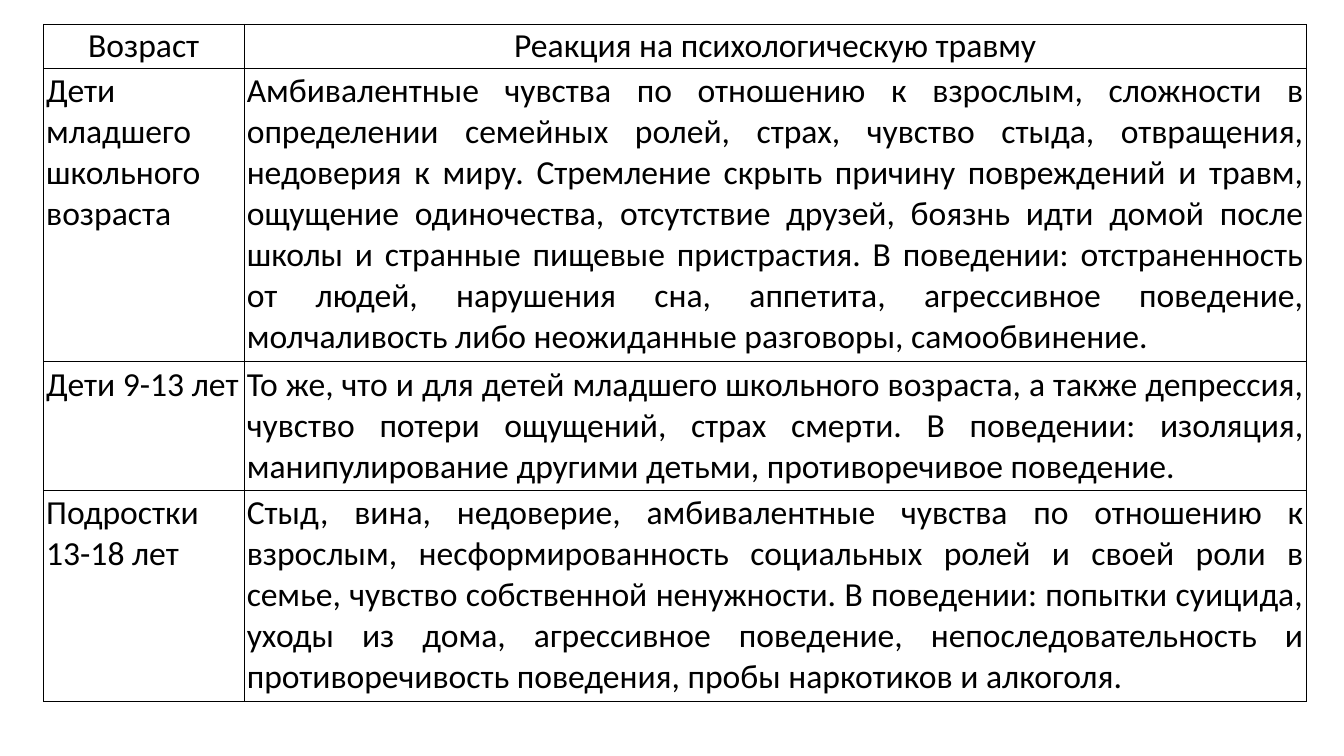
from pptx import Presentation
from pptx.dml.color import RGBColor
from pptx.enum.text import PP_ALIGN
from pptx.oxml import parse_xml
from pptx.oxml.ns import nsdecls
from pptx.util import Pt

COLORS = {"text": "000000", "border": "000000"}
FONT = "Calibri"
COL_WIDTHS = [143.3, 758.9]
ROW_HEIGHTS = [31.5, 209.5, 91.5, 151]
ROWS = [
    ("Возраст", "Реакция на психологическую травму"),
    ("Дети младшего школьного возраста",
     "Амбивалентные чувства по отношению к взрослым, сложности в определении "
     "семейных ролей, страх, чувство стыда, отвращения, недоверия к миру. "
     "Стремление скрыть причину повреждений и травм, ощущение одиночества, "
     "отсутствие друзей, боязнь идти домой после школы и странные пищевые "
     "пристрастия. В поведении: отстраненность от людей, нарушения сна, аппетита, "
     "агрессивное поведение, молчаливость либо неожиданные разговоры, самообвинение."),
    ("Дети 9-13 лет",
     "То же, что и для детей младшего школьного возраста, а также депрессия, "
     "чувство потери ощущений, страх смерти. В поведении: изоляция, "
     "манипулирование другими детьми, противоречивое поведение."),
    ("Подростки 13-18 лет",
     "Стыд, вина, недоверие, амбивалентные чувства по отношению к взрослым, "
     "несформированность социальных ролей и своей роли в семье, чувство собственной "
     "ненужности. В поведении: попытки суицида, уходы из дома, агрессивное поведение, "
     "непоследовательность и противоречивость поведения, пробы наркотиков и алкоголя."),
]


def set_borders(cell, width):
    """Draw a solid line on all four sides of a cell."""
    tcPr = cell._tc.get_or_add_tcPr()
    for i, side in enumerate(("lnL", "lnR", "lnT", "lnB")):
        tcPr.insert(i, parse_xml(
            f'<a:{side} {nsdecls("a")} w="{Pt(width)}"><a:solidFill>'
            f'<a:srgbClr val="{COLORS["border"]}"/></a:solidFill></a:{side}>'))


def format_cell(cell, text, align, inset):
    """Fill one cell with text and set its look."""
    cell.fill.background()
    cell.margin_left = cell.margin_right = Pt(inset)
    cell.margin_top = cell.margin_bottom = Pt(inset)
    cell.text = text
    p = cell.text_frame.paragraphs[0]
    p.alignment = align
    p.font.name = FONT
    p.font.size = Pt(24)
    p.font.bold = False
    p.font.color.rgb = RGBColor.from_string(COLORS["text"])
    set_borders(cell, 0.6)


def add_reactions_table(slide, left, top):
    """Place the table of reactions by age with its top left corner given."""
    table = slide.shapes.add_table(
        len(ROWS), len(COL_WIDTHS), Pt(left), Pt(top),
        Pt(sum(COL_WIDTHS)), Pt(sum(ROW_HEIGHTS))).table
    table.horz_banding = False
    for column, width in zip(table.columns, COL_WIDTHS):
        column.width = Pt(width)
    for r, (texts, height) in enumerate(zip(ROWS, ROW_HEIGHTS)):
        table.rows[r].height = Pt(height)
        align, inset = (PP_ALIGN.JUSTIFY, 2) if r else (PP_ALIGN.CENTER, 1)
        for c, text in enumerate(texts):
            format_cell(table.cell(r, c), text, align, inset)


def main():
    """Build the slide and save it."""
    prs = Presentation()
    prs.slide_width, prs.slide_height = Pt(960), Pt(540)
    slide = prs.slides.add_slide(prs.slide_layouts[6])
    add_reactions_table(slide, 31, 17.3)
    prs.save("out.pptx")


if __name__ == "__main__":
    main()
